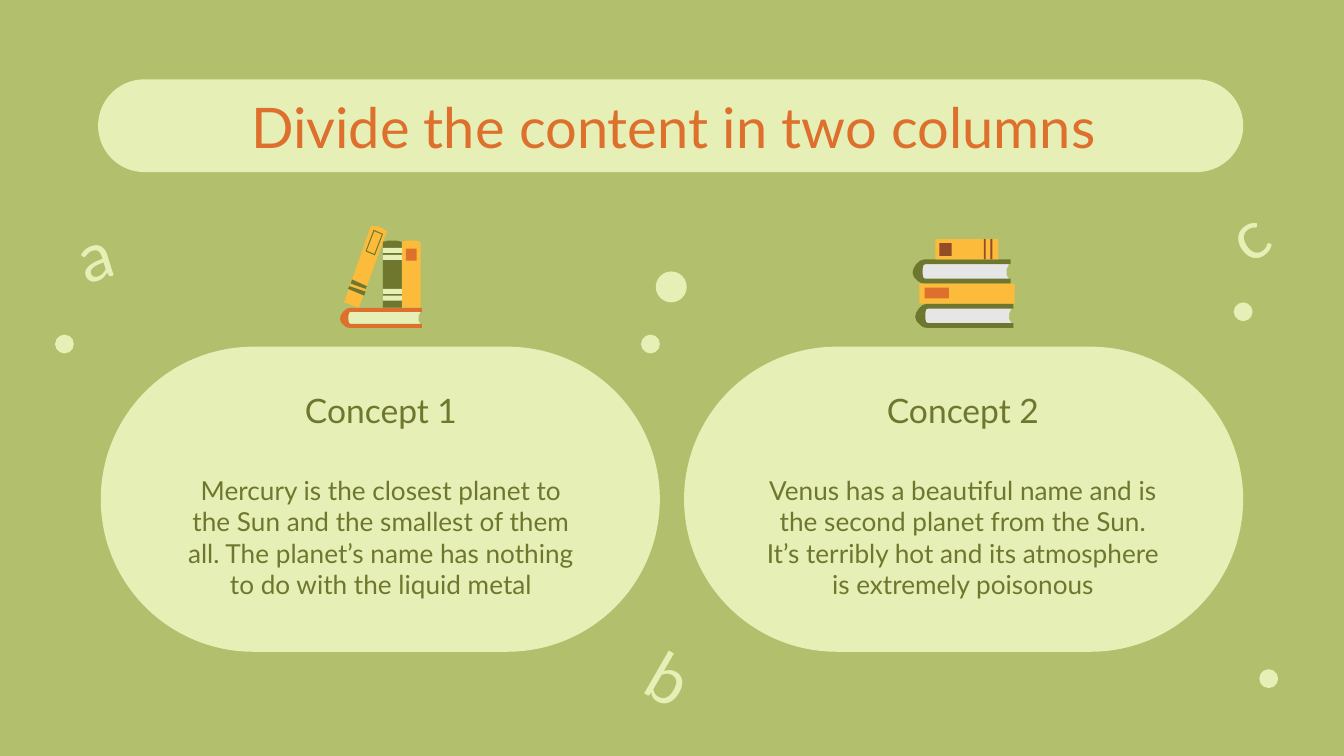
from pptx import Presentation
from pptx.dml.color import RGBColor
from pptx.enum import shapes as kinds, text
from pptx.util import Pt

theme = {
    "back": "B2BF6D", "pale": "E6EFB5", "olive": "6F772E", "rust": "DD702D",
    "gold": "FCBB3B", "grey": "E7E6E6", "brown": "914D27",
    "font": "Lato", "title": 30, "head": 18, "body": 14, "mark": 36,
}

deck = Presentation()
deck.slide_width, deck.slide_height = 9144000, 5143500
unit = deck.slide_width / 100
slide = deck.slides.add_slide(deck.slide_layouts[6])
slide.background.fill.solid()
slide.background.fill.fore_color.rgb = RGBColor.from_string(theme["back"])
form = kinds.MSO_SHAPE


def paint(shape, tint):
    shape.shadow.inherit = False
    shape.fill.solid()
    shape.fill.fore_color.rgb = RGBColor.from_string(theme[tint])
    shape.line.fill.background()
    return shape


def write(area, lines, size, tint, align=text.PP_ALIGN.CENTER):
    box = slide.shapes.add_textbox(*[round(n * unit) for n in area])
    frame = box.text_frame
    frame.word_wrap = True
    frame.vertical_anchor = text.MSO_ANCHOR.MIDDLE
    frame.margin_left = frame.margin_right = round(unit)
    frame.margin_top = frame.margin_bottom = round(unit)
    frame.text = "\n".join(lines)
    for para in frame.paragraphs:
        para.alignment = align
        para.font.name = theme["font"]
        para.font.size = Pt(theme[size])
        para.font.color.rgb = RGBColor.from_string(theme[tint])
    return box


panels = [(7.3, 5.9, 85.2, 6.9), (7.5, 25.8, 41.6, 22.7), (50.9, 25.8, 41.6, 22.7)]
for area in panels:
    panel = slide.shapes.add_shape(form.ROUNDED_RECTANGLE, *[round(n * unit) for n in area])
    paint(panel, "pale").adjustments[0] = 0.5

write((7.5, 5.8, 85.2, 7.1), ["Divide the content in two columns"], "title", "rust")

cards = [
    ("Concept 1", ["Mercury is the closest planet to the Sun and the smallest of them all. "
                   "The planet’s name has nothing to do with the liquid metal"]),
    ("Concept 2", ["Venus has a beautiful name and is the second planet from the Sun.",
                   "It’s terribly hot and its atmosphere is extremely poisonous"]),
]
for col, (head, body) in enumerate(cards):
    left = 12.5 + col * 43.3
    write((left, 28.3, 31.7, 4.4), [head], "head", "olive")
    write((left + 0.1, 32.7, 31.5, 14.5), body, "body", "olive")

# Flat books are in shares of book height; a True mark measures from the right edge.
pages = [(False, 0.35, 0.15), (False, 0.35, 0.85), (True, 0.05, 0.85), (True, 0.17, 0.65),
         (True, 0.17, 0.4), (True, 0.05, 0.15)]
cover = [(True, 0, 0), (False, 0.5, 0), (False, 0.32, 0.05), (False, 0.15, 0.2),
         (False, 0.04, 0.38), (False, 0, 0.55), (False, 0.06, 0.73), (False, 0.25, 0.92),
         (False, 0.36, 0.98), (False, 0.5, 1), (True, 0, 1), (True, 0, 0.8),
         (False, 0.53, 0.8), (False, 0.45, 0.76), (False, 0.42, 0.62), (False, 0.42, 0.38),
         (False, 0.45, 0.24), (False, 0.53, 0.2), (True, 0, 0.2)]

shelf = {
    "flat": [(25.3, 22.9, 6.1, 1.5, "rust", "pale")],
    "cut": [
        ("gold", [(27.6, 16.8), (27.9, 16.8), (28.4, 16.95), (28.8, 17.2), (26.7, 22.9), (25.6, 22.5)]),
        ("olive", [(27.8, 17.1), (28.5, 17.4), (27.9, 19), (27.2, 18.7)]),
        ("gold", [(27.85, 17.22), (28.4, 17.45), (27.85, 18.88), (27.3, 18.65)]),
        ("olive", [(26.2, 20.8), (27.3, 21.3), (27.2, 21.5), (26.1, 21.1)]),
        ("olive", [(26, 21.3), (27.2, 21.7), (27.1, 22), (25.9, 21.5)]),
    ] + [(tint, [(x, 18), (x + 0.4, 17.9), (x + 1, 17.9), (x + 1.4, 18), (x + 1.4, 22.9), (x, 22.9)])
         for tint, x in (("olive", 28.5), ("gold", 29.9))],
    "box": [("pale", 28.5, y, 1.4, 0.37) for y in (18.45, 18.97, 21.5, 22)]
           + [("rust", 30.2, 18.5, 0.8, 0.9)],
}
stack = {
    "flat": [(68.1, 22.6, 7.3, 1.8, "olive", "grey"), (67.9, 19.3, 7.3, 1.8, "olive", "grey")],
    "cut": [],
    "box": [("gold", 68.4, 21.1, 7.1, 1.5), ("rust", 68.8, 21.4, 1.8, 0.8),
            ("gold", 69.6, 17.8, 4.7, 1.5), ("brown", 73.7, 17.8, 0.14, 1.5),
            ("brown", 73.2, 17.8, 0.14, 1.5), ("brown", 69.9, 18.1, 0.9, 0.95)],
}
for icon in (shelf, stack):
    group = slide.shapes.add_group_shape().shapes
    cuts = []
    for x, y, wide, high, skin, leaf in icon["flat"]:
        for tint, path in ((leaf, pages), (skin, cover)):
            cuts.append((tint, [(x + (wide - a * high if right else a * high), y + b * high)
                                for right, a, b in path]))
    for tint, path in cuts + icon["cut"]:
        dots = [(a * unit, b * unit) for a, b in path]
        pen = group.build_freeform(*dots[0], scale=1.0)
        pen.add_line_segments(dots[1:], close=True)
        paint(pen.convert_to_shape(), tint)
    for tint, *area in icon["box"]:
        paint(group.add_shape(form.RECTANGLE, *[round(n * unit) for n in area]), tint)

for x, y, size in [(48.8, 20.2, 2.3), (4.1, 24.9, 1.4), (91.8, 22.5, 1.4),
                   (93.7, 49.8, 1.4), (47.7, 24.9, 1.4)]:
    paint(slide.shapes.add_shape(form.OVAL, *[round(n * unit) for n in (x, y, size, size)]), "pale")

for mark, x, y, turn in [("a", 4.8, 15.9, 342.6), ("b", 47.5, 47.5, 29.9), ("c", 90.6, 14.3, 326.2)]:
    write((x, y, 4.9, 5.9), [mark], "mark", "pale", text.PP_ALIGN.LEFT).rotation = turn

deck.save("out.pptx")
